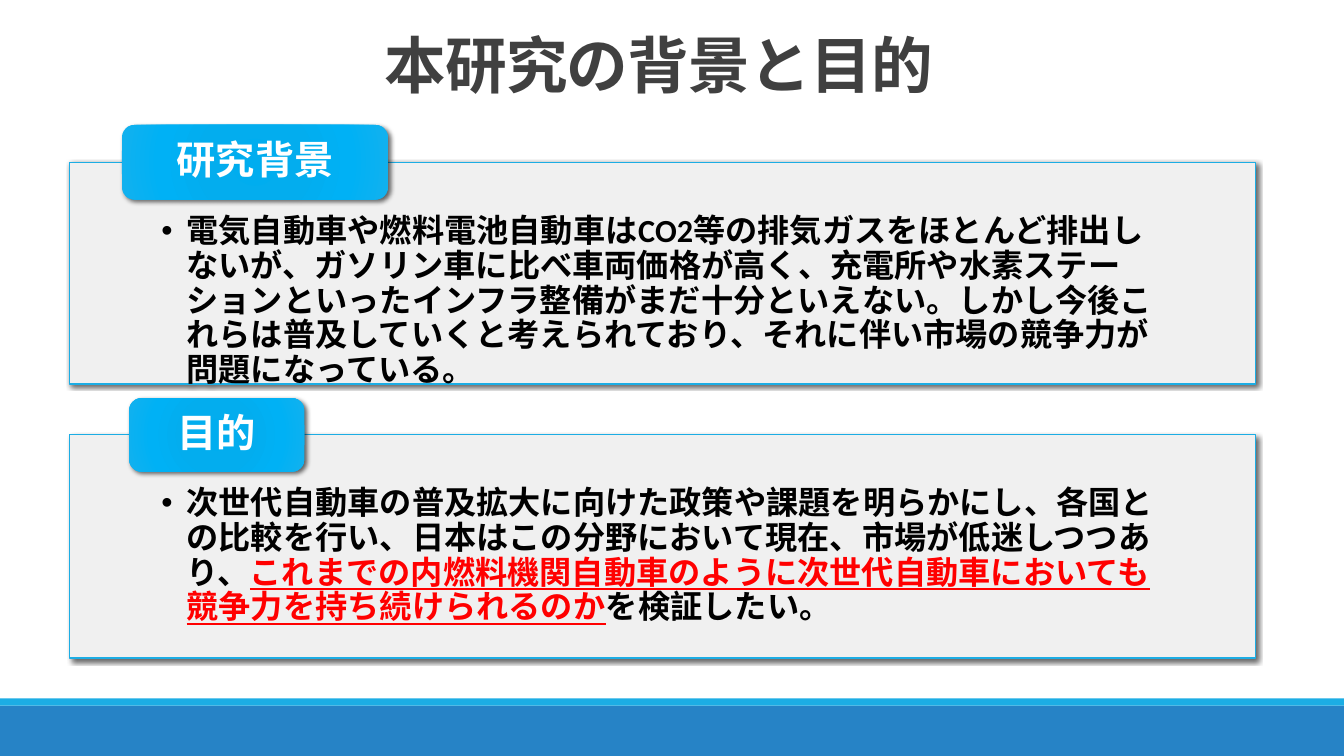
from lxml.etree import SubElement as Sub
from pptx import Presentation
from pptx.dml.color import RGBColor
from pptx.enum.shapes import MSO_SHAPE as Shape
from pptx.enum.text import MSO_ANCHOR as Anchor, MSO_AUTO_SIZE as Auto, PP_ALIGN as Align
from pptx.oxml.ns import qn
from pptx.util import Inches, Pt

BACK = [("電気自動車や燃料電池自動車はCO2等の排気ガスをほとんど排出しないが、ガソリン車に比べ車両価格が高く、"
         "充電所や水素ステーションといったインフラ整備がまだ十分といえない。しかし今後これらは普及していくと"
         "考えられており、それに伴い市場の競争力が問題になっている。", False)]
GOAL = [("次世代自動車の普及拡大に向けた政策や課題を明らかにし、各国との比較を行い、"
         "日本はこの分野において現在、市場が低迷しつつあり、", False),
        ("これまでの内燃料機関自動車のように次世代自動車においても競争力を持ち続けられるのか", True),
        ("を検証したい。", False)]
STOPS = [(0, "00ADEF"), (34, "03ADEE"), (70, "00B1F5"), (100, "12B1EE")]


def paint(item, color):
    item.rgb = RGBColor.from_string(color)


def place(shape, box):
    shape.left, shape.top, shape.width, shape.height = map(Inches, box)


def fill(shape, color):
    shape.fill.solid()
    paint(shape.fill.fore_color, color)


def style(para, size, color, space):
    font = para.font
    font.name, font.size, font.bold = "Calibri", Pt(size), True
    paint(font.color, color)
    para.line_spacing = space
    para.space_before = Pt(0)


def inset(frame, left, top, right, low):
    frame.margin_left, frame.margin_top = Inches(left), Inches(top)
    frame.margin_right, frame.margin_bottom = Inches(right), Inches(low)
    frame.word_wrap = True
    frame.auto_size = Auto.NONE


def shade(shape, blur):
    shape.shadow.inherit = False
    glow = Sub(shape._element.spPr.find(qn("a:effectLst")), qn("a:outerShdw"),
               blurRad=str(Pt(blur)), dist=str(Pt(2)), dir="2700000",
               algn="tl", rotWithShape="0")
    tone = Sub(glow, qn("a:srgbClr"), val="000000")
    Sub(tone, qn("a:alpha"), val="60000")


def blend(shape):
    shape.fill.gradient()
    grad = shape._element.spPr.find(qn("a:gradFill"))
    for part in list(grad):
        grad.remove(part)
    stops = Sub(grad, qn("a:gsLst"))
    for share, color in STOPS:
        stop = Sub(stops, qn("a:gs"), pos=str(share * 1000))
        Sub(stop, qn("a:srgbClr"), val=color)
    ring = Sub(grad, qn("a:path"), path="circle")
    Sub(ring, qn("a:fillToRect"), {side: "100000" for side in "ltrb"})


def head(shape, box, text):
    place(shape, box)
    frame = shape.text_frame
    inset(frame, 0.1, 0.05, 0, 0.05)
    frame.vertical_anchor = Anchor.BOTTOM
    para = frame.paragraphs[0]
    run = para.add_run()
    run.text = text
    run._r.get_or_add_rPr().set("spc", "-50")
    style(para, 44, "404040", 0.85)
    para.alignment = Align.LEFT


def panel(shape, box, parts):
    place(shape, box)
    fill(shape, "F0F0F0")
    paint(shape.line.color, "1CADE4")
    shape.line.width = Pt(1)
    shade(shape, 3)
    frame = shape.text_frame
    inset(frame, 0.91, 0.52, 0.91, 0.18)
    frame.vertical_anchor = Anchor.TOP
    para = frame.paragraphs[0]
    style(para, 23, "000000", 0.9)
    props = para._p.get_or_add_pPr()
    props.set("marL", str(Inches(0.25)))
    props.set("indent", str(-Inches(0.25)))
    for text, key in parts:
        run = para.add_run()
        run.text = text
        if key:
            run.font.underline = True
            paint(run.font.color, "FF0000")


def tab(slide, box, text):
    shape = slide.shapes.add_shape(Shape.ROUNDED_RECTANGLE, *map(Inches, box))
    blend(shape)
    shape.line.fill.background()
    shade(shape, 3.5)
    frame = shape.text_frame
    inset(frame, 0.31, 0, 0.31, 0)
    frame.vertical_anchor = Anchor.MIDDLE
    para = frame.paragraphs[0]
    para.add_run().text = text
    style(para, 28, "FFFFFF", 0.9)
    para.alignment = Align.CENTER


def foot(slide, box):
    left, top, width, height = box
    for y, tall, color in [(top + 0.07, height - 0.07, "2683C6"), (top, 0.07, "1CADE4")]:
        bar = slide.shapes.add_shape(Shape.RECTANGLE, *map(Inches, (left, y, width, tall)))
        fill(bar, color)
        bar.line.fill.background()
        bar.shadow.inherit = False


def main():
    deck = Presentation()
    deck.slide_width, deck.slide_height = Inches(13.33), Inches(7.5)
    slide = deck.slides.add_slide(deck.slide_layouts[3])
    title, upper, lower = slide.placeholders
    foot(slide, (0, 6.93, 13.33, 0.57))
    head(title, (3.71, 0.23, 5.71, 0.82), "本研究の背景と目的")
    panel(upper, (0.69, 1.61, 11.76, 2.2), BACK)
    tab(slide, (1.21, 1.24, 2.64, 0.74), "研究背景")
    panel(lower, (0.69, 4.31, 11.76, 2.22), GOAL)
    tab(slide, (1.28, 3.95, 1.74, 0.73), "目的")
    deck.save("out.pptx")


if __name__ == "__main__":
    main()
